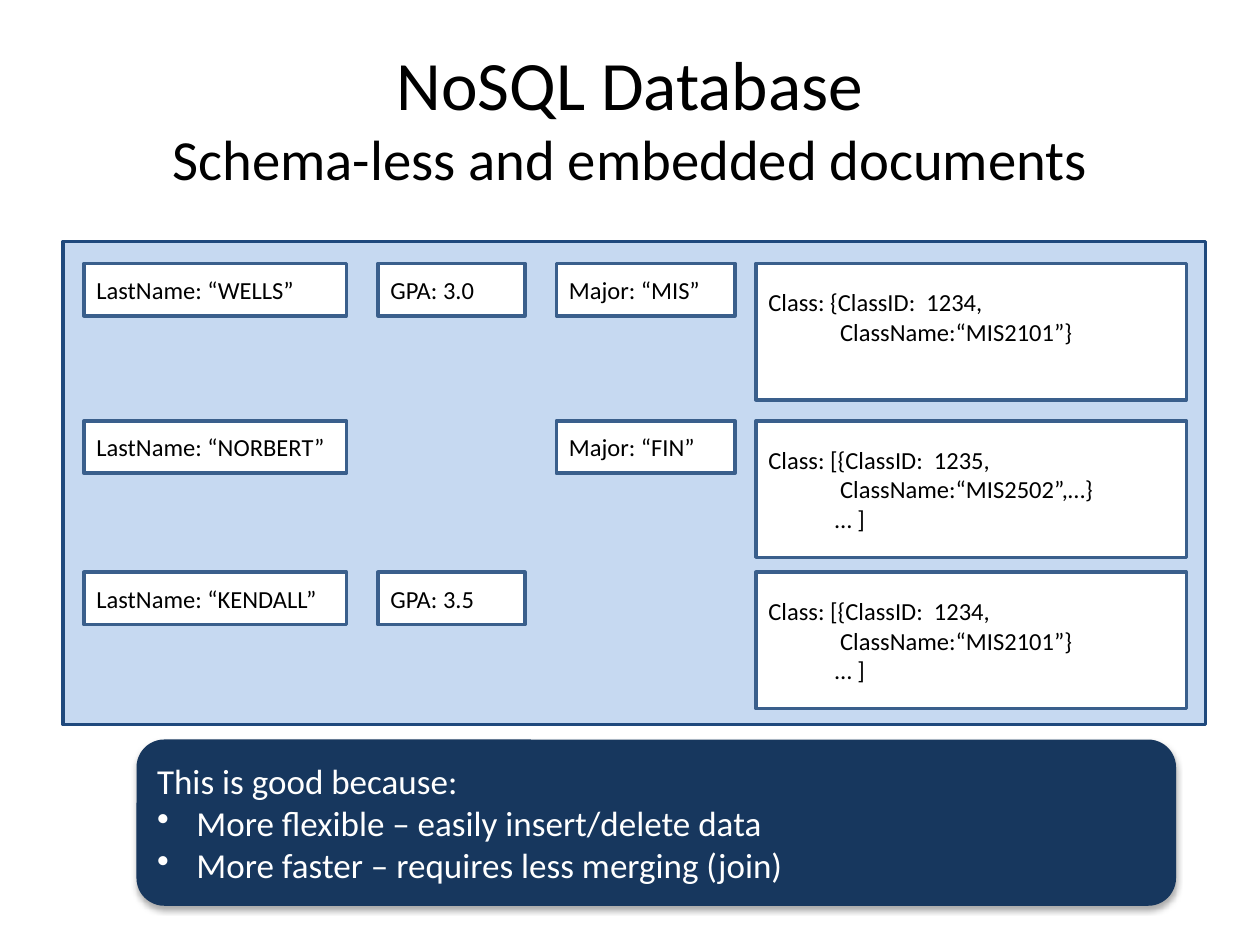
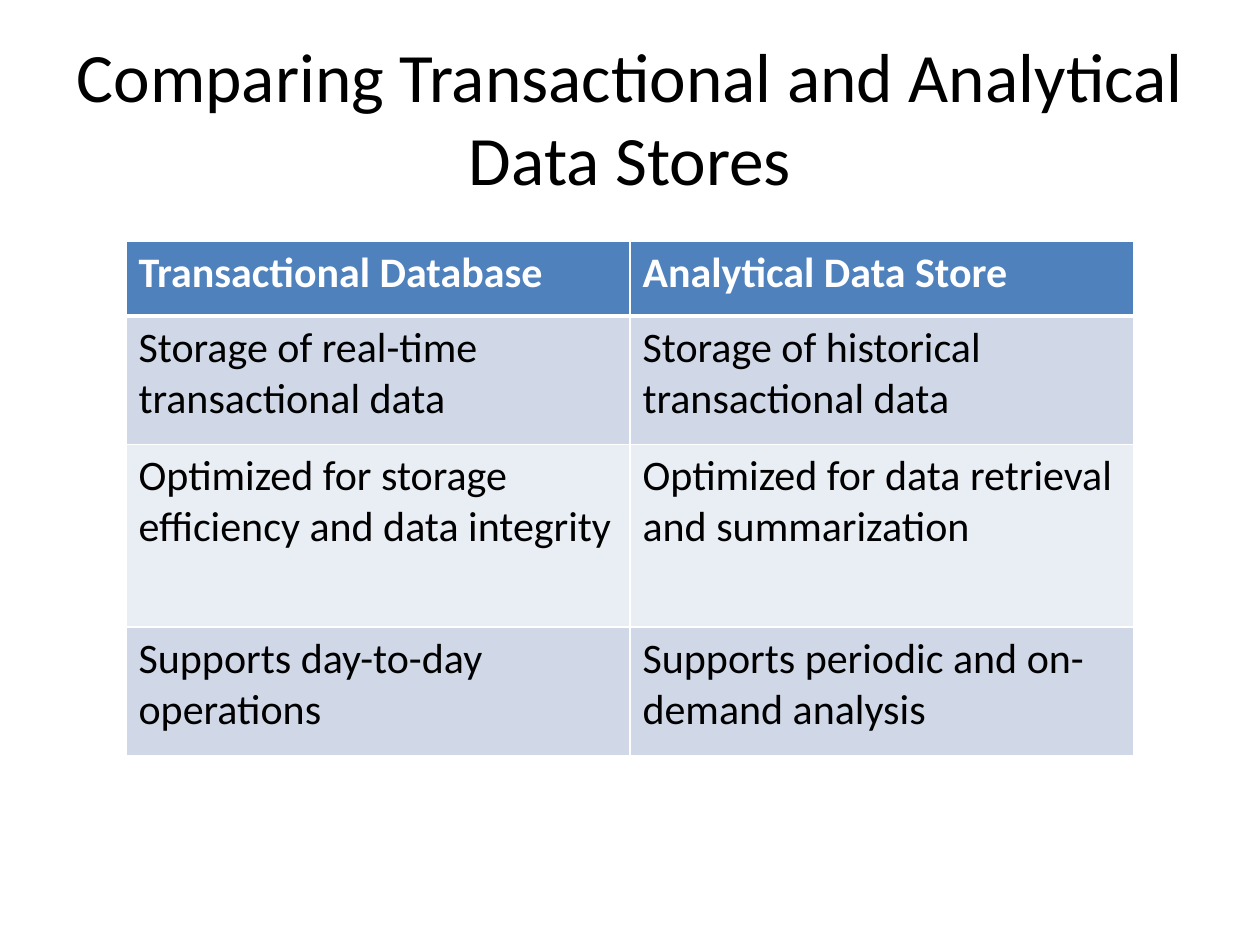
from pptx import Presentation
from pptx.dml.color import RGBColor
from pptx.enum.shapes import MSO_SHAPE
from pptx.enum.text import MSO_ANCHOR, PP_ALIGN
from pptx.oxml import parse_xml
from pptx.oxml.ns import nsdecls
from pptx.util import Pt

RECT, ROUNDED = MSO_SHAPE.RECTANGLE, MSO_SHAPE.ROUNDED_RECTANGLE
MIDDLE = MSO_ANCHOR.MIDDLE
LEFT, CENTER = PP_ALIGN.LEFT, PP_ALIGN.CENTER

BLACK = RGBColor(0x00, 0x00, 0x00)
WHITE = RGBColor(0xFF, 0xFF, 0xFF)
NAVY = RGBColor(0x17, 0x37, 0x5E)
PANEL_FILL = RGBColor(0xC6, 0xD9, 0xF1)
PANEL_LINE = RGBColor(0x1F, 0x49, 0x7D)
FIELD_LINE = RGBColor(0x3A, 0x5F, 0x8C)
HEADER_FILL = RGBColor(0x4F, 0x81, 0xBD)
BANDS = (RGBColor(0xD0, 0xD8, 0xE8), RGBColor(0xE9, 0xED, 0xF4))

BASE_FONT = {"name": "Calibri", "bold": False}
TITLE_SIZE, SUBTITLE_SIZE = 39.6, 32.4
FIELD_SIZE, CALLOUT_SIZE, TABLE_SIZE = 14, 20, 24
LINE_HEIGHT = 17
BULLET_INDENT = 22.5
CLASS_NAME_INDENT, CLASS_END_INDENT = 41, 38
FIELD_HEIGHT, CLASS_HEIGHT = 30, 78

FIELD_COLUMNS = ((48, 150), (216, 84), (318, 102))
CLASS_LEFT, CLASS_WIDTH = 432, 246
STUDENTS = (
    (150.5, ("LastName: “WELLS”", "GPA: 3.0", "Major: “MIS”"),
     ("Class: {ClassID:  1234,", "ClassName:“MIS2101”}")),
    (240.5, ("LastName: “NORBERT”", None, "Major: “FIN”"),
     ("Class: [{ClassID:  1235,", "ClassName:“MIS2502”,…}", "… ]")),
    (327, ("LastName: “KENDALL”", "GPA: 3.5", None),
     ("Class: [{ClassID:  1234,", "ClassName:“MIS2101”}", "… ]")),
)
CLASS_INDENTS = (0, CLASS_NAME_INDENT, CLASS_END_INDENT)

BENEFITS = (
    ("This is good because:", 0, False),
    ("More flexible – easily insert/delete data", BULLET_INDENT, True),
    ("More faster – requires less merging (join)", BULLET_INDENT, True),
)

COMPARISON = (
    (42.5, "Transactional Database", "Analytical Data Store"),
    (73.4, "Storage of real-time transactional data",
     "Storage of historical transactional data"),
    (104.4, "Optimized for storage efficiency and data integrity",
     "Optimized for data retrieval and summarization"),
    (73.4, "Supports day-to-day operations",
     "Supports periodic and on-demand analysis"),
)


class Deck:
    def __init__(self):
        self.presentation = Presentation()
        self.presentation.slide_width = Pt(720)
        self.presentation.slide_height = Pt(540)
        self.slide = None

    def new_slide(self, *title_lines):
        blank = self.presentation.slide_layouts[6]
        self.slide = self.presentation.slides.add_slide(blank)
        title = self.slide.shapes.add_textbox(Pt(36), Pt(21.6), Pt(648), Pt(90))
        frame = title.text_frame
        frame.word_wrap = True
        frame.vertical_anchor = MIDDLE
        paragraph = frame.paragraphs[0]
        paragraph.alignment = CENTER
        for number, (text, size) in enumerate(title_lines):
            if number:
                paragraph.add_line_break()
            self.add_text(paragraph, text, size)

    def add_text(self, paragraph, text, size, color=BLACK, **changes):
        run = paragraph.add_run()
        run.text = text
        for key, value in {**BASE_FONT, "size": Pt(size), **changes}.items():
            setattr(run.font, key, value)
        run.font.color.rgb = color

    def box(self, kind, left, top, width, height, fill, line=None):
        box = self.slide.shapes.add_shape(kind, Pt(left), Pt(top), Pt(width), Pt(height))
        box.shadow.inherit = False
        box.fill.solid()
        box.fill.fore_color.rgb = fill
        if line is None:
            box.line.fill.background()
        else:
            box.line.color.rgb = line
            box.line.width = Pt(2)
        return box

    def add_lines(self, box, lines, size, color=BLACK):
        frame = box.text_frame
        frame.word_wrap = True
        frame.vertical_anchor = MIDDLE
        for number, (text, indent, bulleted) in enumerate(lines):
            paragraph = frame.add_paragraph() if number else frame.paragraphs[0]
            paragraph.alignment = LEFT
            properties = paragraph._p.get_or_add_pPr()
            properties.set("marL", str(Pt(indent)))
            if bulleted:
                properties.set("indent", str(-Pt(indent)))
                properties.append(parse_xml(f'<a:buChar {nsdecls("a")} char="•"/>'))
            self.add_text(paragraph, text, size, color)

    def field(self, left, top, width, text):
        box = self.box(RECT, left, top, width, FIELD_HEIGHT, WHITE, FIELD_LINE)
        self.add_lines(box, [(text, 0, False)], FIELD_SIZE)

    def class_document(self, top, texts):
        box = self.box(RECT, CLASS_LEFT, top, CLASS_WIDTH, CLASS_HEIGHT, WHITE, FIELD_LINE)
        missing_lines = len(CLASS_INDENTS) - len(texts)
        box.text_frame.margin_bottom = Pt(3.6 + missing_lines * LINE_HEIGHT)
        lines = [(text, indent, False) for text, indent in zip(texts, CLASS_INDENTS)]
        self.add_lines(box, lines, FIELD_SIZE)

    def callout(self, lines):
        box = self.box(ROUNDED, 78, 422.6, 594, 95, NAVY)
        effects = box._element.spPr.find(".//{*}effectLst")
        effects.append(parse_xml(
            f'<a:outerShdw {nsdecls("a")} blurRad="{Pt(3.5)}" dist="{Pt(2.2)}" '
            'dir="5400000" rotWithShape="0"><a:srgbClr val="000000">'
            '<a:alpha val="32000"/></a:srgbClr></a:outerShdw>'))
        self.add_lines(box, lines, CALLOUT_SIZE, WHITE)

    def cell_borders(self, cell, widths):
        properties = cell._tc.get_or_add_tcPr()
        for side, width in widths.items():
            properties.append(parse_xml(
                f'<a:ln{side} {nsdecls("a")} w="{Pt(width)}"><a:solidFill>'
                f'<a:srgbClr val="{WHITE}"/></a:solidFill></a:ln{side}>'))

    def comparison_table(self, rows):
        height = sum(row[0] for row in rows)
        table = self.slide.shapes.add_table(
            len(rows), 2, Pt(72), Pt(138), Pt(576), Pt(height)).table
        for row_number, (row_height, *texts) in enumerate(rows):
            table.rows[row_number].height = Pt(row_height)
            header = row_number == 0
            top = 3 if row_number == 1 else 1
            widths = {"L": 1, "R": 1, "T": top, "B": 3 if header else 1}
            for column, text in enumerate(texts):
                cell = table.cell(row_number, column)
                self.cell_borders(cell, widths)
                cell.fill.solid()
                cell.fill.fore_color.rgb = HEADER_FILL if header else BANDS[(row_number - 1) % 2]
                self.add_text(cell.text_frame.paragraphs[0], text, TABLE_SIZE,
                              WHITE if header else BLACK, bold=header)


def main():
    deck = Deck()

    deck.new_slide(("NoSQL Database", TITLE_SIZE),
                   ("Schema-less and embedded documents", SUBTITLE_SIZE))
    deck.callout(BENEFITS)
    deck.box(RECT, 36, 138, 653, 276, PANEL_FILL, PANEL_LINE)
    for top, fields, class_texts in STUDENTS:
        for (left, width), text in zip(FIELD_COLUMNS, fields):
            if text:
                deck.field(left, top, width, text)
        deck.class_document(top, class_texts)

    deck.new_slide(("Comparing Transactional and Analytical Data Stores", TITLE_SIZE))
    deck.comparison_table(COMPARISON)

    deck.presentation.save("out.pptx")


if __name__ == "__main__":
    main()
